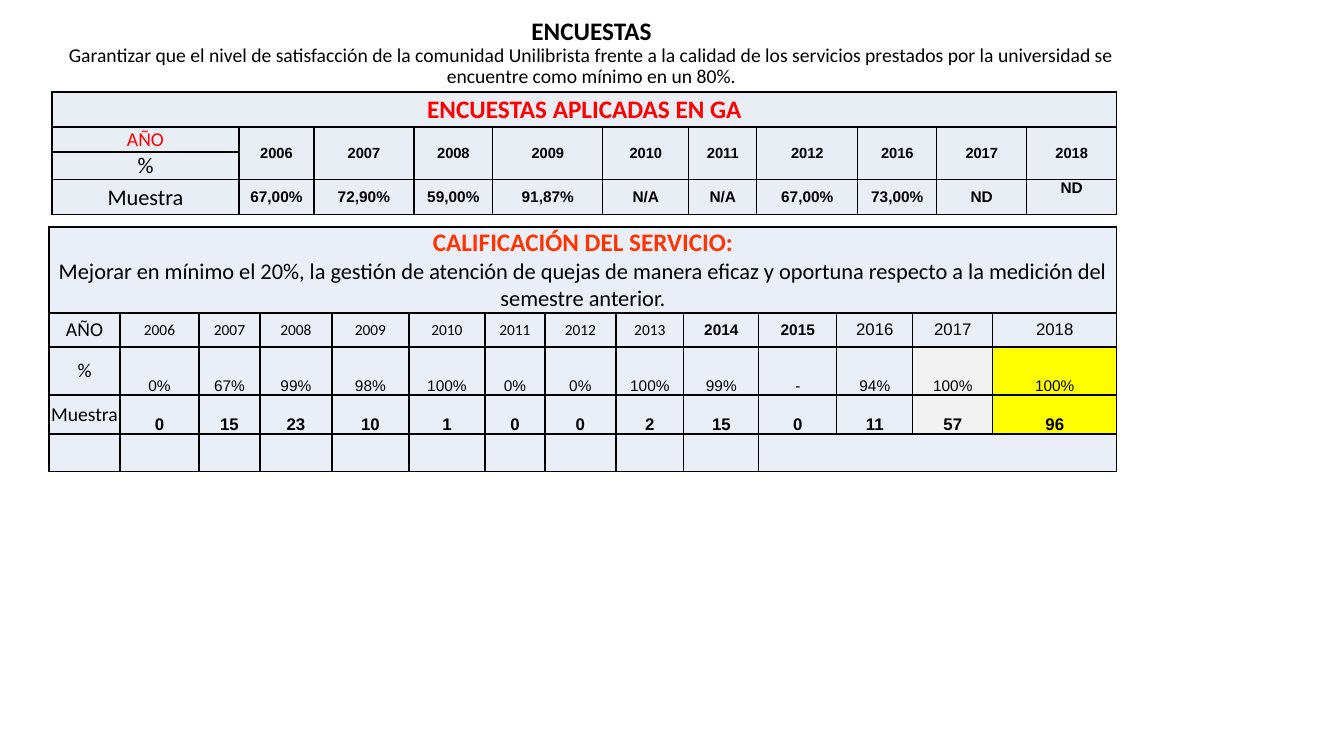
from pptx import Presentation, util as u
from pptx.dml.color import RGBColor
from pptx.enum import text as t
from pptx.oxml import parse_xml
from pptx.oxml.ns import nsdecls

TITLE = "ENCUESTAS"
GOAL = ("Garantizar que el nivel de satisfacción de la comunidad Unilibrista frente a la calidad "
        "de los servicios prestados por la universidad se encuentre como mínimo en un 80%.")
AIM = ("Mejorar en mínimo el 20%, la gestión de atención de quejas de manera eficaz y oportuna "
       "respecto a la medición del semestre anterior.")
MID, LOW, TOP = t.MSO_ANCHOR.MIDDLE, t.MSO_ANCHOR.BOTTOM, t.MSO_ANCHOR.TOP
BLACK, RED, ORANGE = "000000", "FF0000", "FF3300"

# style: font, size, bold, colour, anchor
SURVEY = {
    "at": (52, 92), "fill": "E9EDF4",
    "cols": [187, 75, 100, 79, 110, 86, 68, 101, 79, 90, 90],
    "rows": [35, 25, 28, 35],
    "text": [
        ["ENCUESTAS APLICADAS EN GA"],
        ["AÑO", "2006", "2007", "2008", "2009", "2010", "2011", "2012", "2016", "2017", "2018"],
        ["%"],
        ["Muestra", "67,00%", "72,90%", "59,00%", "91,87%", "N/A", "N/A", "67,00%", "73,00%",
         "ND", "ND"],
    ],
    "head": [("Calibri", 18, True, RED, MID), ("Calibri", 14, False, RED, MID),
             ("Calibri", 16, False, BLACK, MID), ("Calibri", 16, False, BLACK, MID)],
    "body": [None, ("Arial", 10.5, True, BLACK, MID), None, ("Arial", 11, True, BLACK, MID)],
    "odd": {(3, 10): ("Arial", 11, True, BLACK, TOP)},
    "tint": {},
    "merge": [(0, 0, 0, 10)] + [(1, c, 2, c) for c in range(1, 11)],
}
LABEL = ("Calibri", 14, False, BLACK, MID)
RATING = {
    "at": (49, 227), "fill": "EAEFF7",
    "cols": [71, 79, 61, 72, 77, 76, 60, 71, 68, 75, 78, 76, 80, 124],
    "rows": [86, 34, 48, 39, 38],
    "text": [
        ["CALIFICACIÓN DEL SERVICIO:\n" + AIM],
        ["AÑO"] + [str(y) for y in range(2006, 2019)],
        ["%", "0%", "67%", "99%", "98%", "100%", "0%", "0%", "100%", "99%", "-", "94%",
         "100%", "100%"],
        ["Muestra", "0", "15", "23", "10", "1", "0", "0", "2", "15", "0", "11", "57", "96"],
        [],
    ],
    "head": [("Calibri", 18, True, ORANGE, MID), LABEL, LABEL, LABEL, LABEL],
    "body": [None, ("Calibri", 11, False, BLACK, MID), ("Arial", 11, False, BLACK, LOW),
             ("Arial", 12, True, BLACK, LOW), None],
    "odd": {**{(1, c): ("Arial", 11, True, BLACK, MID) for c in (9, 10)},
            **{(1, c): ("Arial", 12, False, BLACK, MID) for c in (11, 12, 13)}},
    "tint": {(r, c): k for r in (2, 3) for c, k in ((12, "F2F2F2"), (13, "FFFF00"))},
    "merge": [(0, 0, 0, 13), (4, 10, 4, 13)],
}


def px(n):
    return u.Emu(round(n * 914400 / 100.8))


def color(code):
    return RGBColor.from_string(code)


def ink(run, face, size, bold, code):
    run.font.name, run.font.size, run.font.bold = face, u.Pt(size), bold
    run.font.color.rgb = color(code)


def edge(cell):
    props = cell._tc.get_or_add_tcPr()
    for side in "LRTB":
        props.append(parse_xml(
            f'<a:ln{side} {nsdecls("a")} w="12700"><a:solidFill><a:srgbClr val="{BLACK}"/>'
            f'</a:solidFill></a:ln{side}>'))


def grid(slide, data):
    cols, rows = data["cols"], data["rows"]
    x, y = data["at"]
    table = slide.shapes.add_table(len(rows), len(cols), px(x), px(y),
                                   px(sum(cols)), px(sum(rows))).table
    table.first_row = table.horz_banding = False
    for col, wide in zip(table.columns, cols):
        col.width = px(wide)
    for r, high in enumerate(rows):
        table.rows[r].height = px(high)
        words = data["text"][r]
        for c in range(len(cols)):
            cell = table.cell(r, c)
            edge(cell)
            cell.fill.solid()
            cell.fill.fore_color.rgb = color(data["tint"].get((r, c), data["fill"]))
            cell.margin_left = cell.margin_right = cell.margin_top = cell.margin_bottom = 0
            if c >= len(words):
                continue
            base = data["body"][r] if c else data["head"][r]
            *look, cell.vertical_anchor = data["odd"].get((r, c), base)
            cell.text_frame.text = words[c]
            for para in cell.text_frame.paragraphs:
                para.alignment = t.PP_ALIGN.CENTER
                ink(para.runs[0], *look)
    for r, c, last, end in data["merge"]:
        table.cell(r, c).merge(table.cell(last, end))
    return table


def main():
    deck = Presentation()
    deck.slide_width, deck.slide_height = px(1344), px(756)
    slide = deck.slides.add_slide(deck.slide_layouts[6])

    frame = slide.shapes.add_textbox(px(51), px(23), px(1081), px(70)).text_frame
    frame.word_wrap = True
    frame.vertical_anchor = LOW
    para = frame.paragraphs[0]
    para.text = TITLE + "\v" + GOAL
    para.alignment, para.line_spacing = t.PP_ALIGN.CENTER, 0.9
    ink(para.runs[0], "Calibri", 18, True, BLACK)
    ink(para.runs[1], "Calibri", 14, False, BLACK)

    grid(slide, SURVEY)
    rating = grid(slide, RATING)
    aim = rating.cell(0, 0).text_frame.paragraphs[1]
    ink(aim.runs[0], "Calibri", 16, False, BLACK)
    deck.save("out.pptx")


if __name__ == "__main__":
    main()
